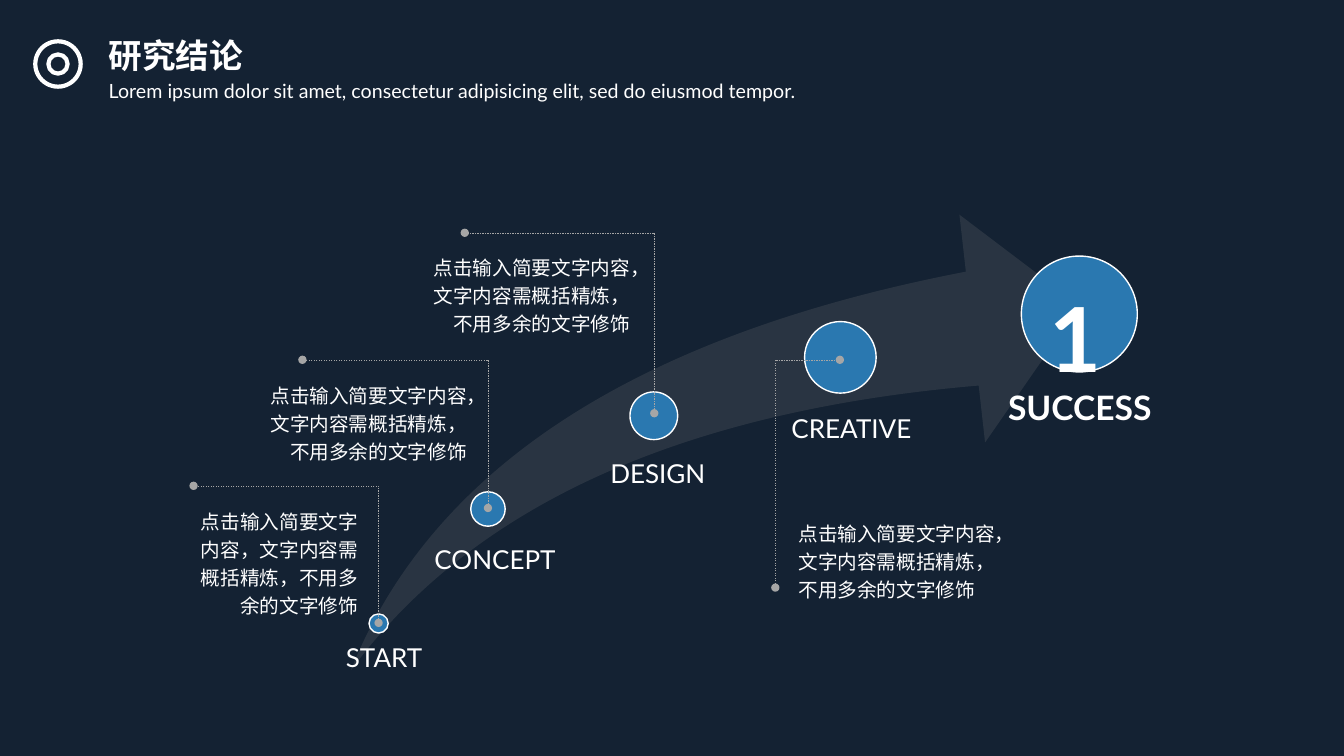
from typing import NamedTuple, Optional

from lxml.etree import SubElement
from pptx import Presentation
from pptx.dml.color import RGBColor
from pptx.enum.dml import MSO_LINE
from pptx.enum.shapes import MSO_CONNECTOR as Link, MSO_SHAPE as Preset
from pptx.enum.text import MSO_AUTO_SIZE as AutoSize, PP_ALIGN as Align
from pptx.oxml.ns import qn
from pptx.util import Emu, Inches, Pt

# Grid of square cells, 160 columns by 90 rows
SLIDE_W, SLIDE_H = Inches(13.33), Inches(7.5)
CELL = SLIDE_H / 90

NAVY, BLUE, WHITE, GREY, DOT_GREY = "142233", "2A78B0", "FFFFFF", "808080", "A6A6A6"
FONT = "Lato"
NOTE = "点击输入简要文字内容，文字内容需概括精炼，不用多余的文字修饰"


class Point(NamedTuple):
    col: float
    row: float


class Box(NamedTuple):
    col: float
    row: float
    cols: float
    rows: float


class Stage(NamedTuple):
    name: str
    centre: Point
    diameter: float
    label: Box
    inset: float
    size: float = 18.6
    bold: bool = False


class Callout(NamedTuple):
    start: Point
    end: Point
    note: Box
    align: Align = Align.RIGHT


STAGES = [
    Stage("START", Point(45.06, 74.22), 2.28, Box(35.04, 75.6, 20.16, 6.24), 1.2),
    Stage("CONCEPT", Point(58.08, 60.6), 4.1, Box(47.4, 63.96, 20.88, 7.32), 2.16),
    Stage("DESIGN", Point(77.82, 49.5), 5.68, Box(66.36, 53.76, 20.88, 8.76), 3),
    Stage("CREATIVE", Point(100.02, 42.54), 8.52, Box(89.4, 48.36, 20.88, 8.76), 3),
    Stage("SUCCESS", Point(128.46, 37.38), 13.8, Box(114, 45.12, 26.04, 8.76), 3, 24, True),
]

CALLOUTS = [
    Callout(Point(45.06, 74.16), Point(23.04, 57.84), Box(21, 59.52, 22.8, 14.76)),
    Callout(Point(58.08, 60.48), Point(36, 42.84), Box(30.24, 44.52, 26.52, 14.52)),
    Callout(Point(77.88, 49.2), Point(55.32, 27.72), Box(49.32, 29.28, 26.88, 14.76)),
    Callout(Point(92.28, 69.96), Point(99.96, 42.84), Box(93.84, 60.96, 27.84, 11.4), Align.LEFT),
]


def colour(value: str) -> RGBColor:
    return RGBColor.from_string(value)


def cells(*counts: float) -> list[Emu]:
    return [Emu(round(count * CELL)) for count in counts]


def add_text(slide, text: str, box: Box, size: float, bold: bool = False,
             align: Align = Align.LEFT, before: float = 0,
             left_inset: Optional[float] = None) -> None:
    """Write one paragraph; a left inset drops the other three margins."""
    frame = slide.shapes.add_textbox(*cells(*box)).text_frame
    frame.word_wrap = True
    if left_inset is None:
        frame.auto_size = AutoSize.SHAPE_TO_FIT_TEXT
    else:
        frame.margin_left, = cells(left_inset)
        frame.margin_top = frame.margin_right = frame.margin_bottom = 0
    paragraph = frame.paragraphs[0]
    paragraph.text = text
    paragraph.alignment = align
    paragraph.line_spacing = 1.2
    if before:
        paragraph.space_before = Pt(before)
    font = paragraph.font
    font.name, font.size, font.bold = FONT, Pt(size), bold
    font.color.rgb = colour(WHITE)


def add_circle(slide, centre: Point, diameter: float, line_width: float,
               fill: Optional[str] = None) -> None:
    radius = diameter / 2
    circle = slide.shapes.add_shape(Preset.OVAL, *cells(
        centre.col - radius, centre.row - radius, diameter, diameter))
    circle.shadow.inherit = False
    if fill:
        circle.fill.solid()
        circle.fill.fore_color.rgb = colour(fill)
    else:
        circle.fill.background()
    circle.line.color.rgb = colour(WHITE)
    circle.line.width = Pt(line_width)


def add_swoosh(slide, box: Box) -> None:
    swoosh = slide.shapes.add_shape(Preset.SWOOSH_ARROW, *cells(*box))
    swoosh.shadow.inherit = False
    swoosh.adjustments[0] = swoosh.adjustments[1] = 0.25
    swoosh.fill.solid()
    swoosh.fill.fore_color.rgb = colour(GREY)
    tint = swoosh.fill._xPr.find(qn("a:solidFill"))[0]
    SubElement(tint, qn("a:alpha"), val="20000")
    swoosh.line.fill.background()


def add_leader(slide, start: Point, end: Point) -> None:
    """Draw a dashed elbow that leaves its start vertically."""
    leader = slide.shapes.add_connector(Link.ELBOW, *cells(*start, *end))
    leader.line.color.rgb = colour(DOT_GREY)
    leader.line.width = Pt(0.25)
    leader.line.dash_style = MSO_LINE.DASH
    properties = leader._element.spPr
    guides = properties.find(qn("a:prstGeom")).get_or_add_avLst()
    SubElement(guides, qn("a:gd"), name="adj1", fmla="val 0")
    for tip in ("a:headEnd", "a:tailEnd"):
        SubElement(properties.find(qn("a:ln")), qn(tip), type="oval")
    SubElement(properties, qn("a:effectLst"))


def main() -> None:
    deck = Presentation()
    deck.slide_width, deck.slide_height = SLIDE_W, SLIDE_H
    slide = deck.slides.add_slide(deck.slide_layouts[6])
    slide.background.fill.solid()
    slide.background.fill.fore_color.rgb = colour(NAVY)

    # Growth path with its stages
    add_swoosh(slide, Box(41.76, 25.56, 86.76, 54.24))
    for stage in STAGES:
        add_circle(slide, stage.centre, stage.diameter, 1, BLUE)
        add_text(slide, stage.name, stage.label, stage.size, stage.bold,
                 Align.CENTER, left_inset=stage.inset)
    add_text(slide, "1", Box(123.72, 30.48, 7.56, 16.68), 64, bold=True)

    # Notes with leader lines
    for callout in CALLOUTS:
        add_leader(slide, callout.start, callout.end)
        add_text(slide, NOTE, callout.note, 14, align=callout.align)

    # Heading with ring icon
    add_text(slide, "Lorem ipsum dolor sit amet, consectetur adipisicing elit, "
             "sed do eiusmod tempor.", Box(11.76, 8.28, 94.2, 4.32), 14, before=10)
    add_text(slide, "研究结论", Box(11.76, 2.64, 34.8, 6.48), 24, bold=True)
    for diameter in (5.4, 2.28):
        add_circle(slide, Point(6.9, 7.62), diameter, 3)

    deck.save("out.pptx")


if __name__ == "__main__":
    main()
